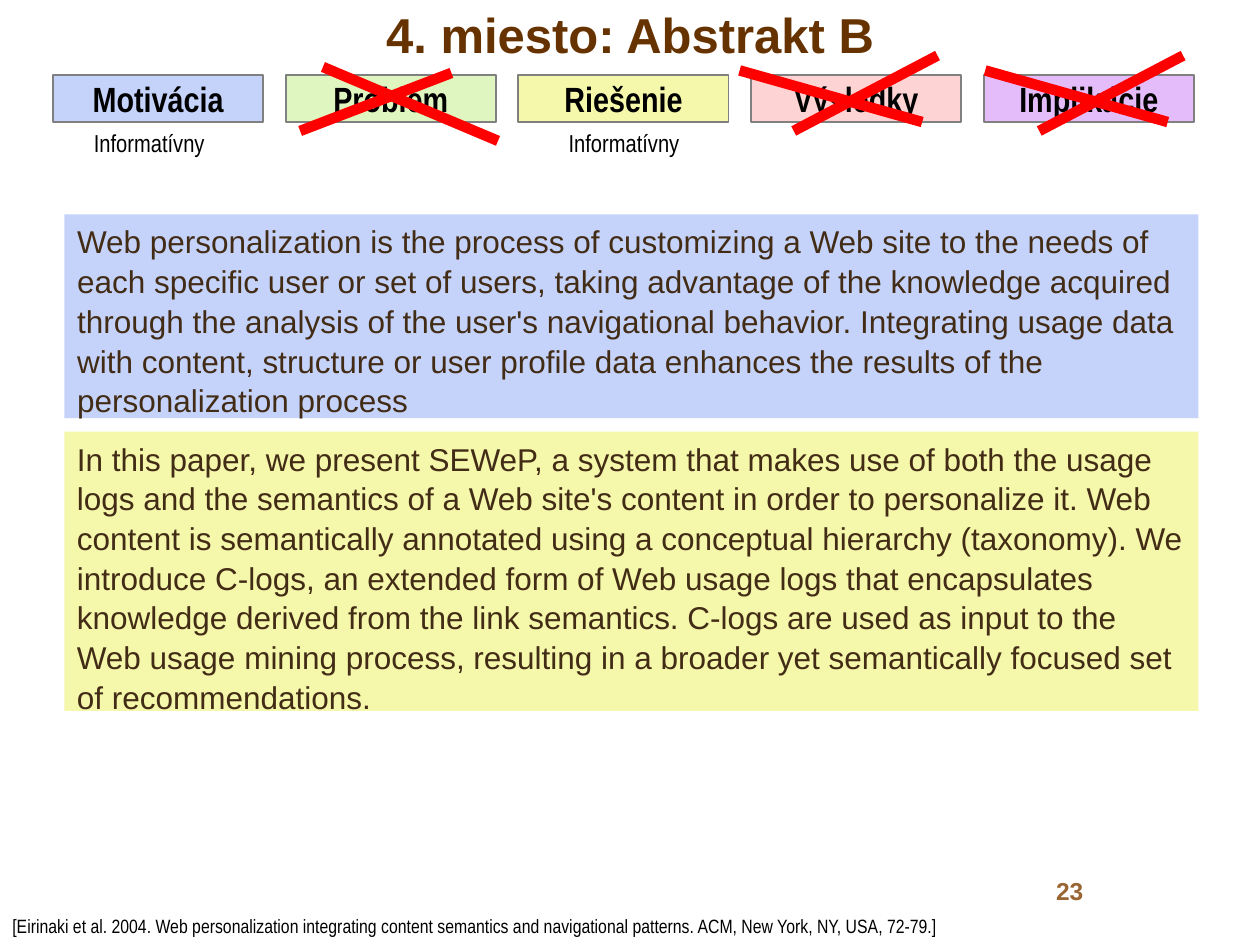
from lxml.etree import SubElement
from pptx import Presentation
from pptx.dml.color import RGBColor
from pptx.enum.shapes import MSO_CONNECTOR, MSO_SHAPE
from pptx.enum.text import MSO_ANCHOR, MSO_AUTO_SIZE, PP_ALIGN
from pptx.oxml.ns import qn
from pptx.util import Cm, Pt

# Colours
BLACK = RGBColor(0x00, 0x00, 0x00)
GREY = RGBColor(0x80, 0x80, 0x80)
RED = RGBColor(0xFF, 0x00, 0x00)
TITLE_BROWN = RGBColor(0x66, 0x33, 0x00)
NUMBER_BROWN = RGBColor(0x99, 0x66, 0x33)
BODY_BROWN = RGBColor(0x42, 0x2C, 0x16)
BLUE = RGBColor(0xC5, 0xD3, 0xFB)
GREEN = RGBColor(0xDF, 0xF6, 0xC0)
YELLOW = RGBColor(0xF5, 0xF7, 0xAB)
PINK = RGBColor(0xFD, 0xD3, 0xD4)
VIOLET = RGBColor(0xE4, 0xBC, 0xFA)

# Content
TITLE = "4. miesto: Abstrakt B"
SECTIONS = [("Motivácia", BLUE), ("Problém", GREEN), ("Riešenie", YELLOW),
            ("Výsledky", PINK), ("Implikácie", VIOLET)]
RATING = "Informatívny"
RATING_LEFTS = [0.89, 10.46]
MOTIVATION = (
    "Web personalization is the process of customizing a Web site to the needs of "
    "each specific user or set of users, taking advantage of the knowledge acquired "
    "through the analysis of the user's navigational behavior. Integrating usage data "
    "with content, structure or user profile data enhances the results of the "
    "personalization process")
SOLUTION = (
    "In this paper, we present SEWeP, a system that makes use of both the usage "
    "logs and the semantics of a Web site's content in order to personalize it. Web "
    "content is semantically annotated using a conceptual hierarchy (taxonomy). We "
    "introduce C-logs, an extended form of Web usage logs that encapsulates "
    "knowledge derived from the link semantics. C-logs are used as input to the "
    "Web usage mining process, resulting in a broader yet semantically focused set "
    "of recommendations.")
CITATION = ("[Eirinaki et al. 2004. Web personalization integrating content semantics "
            "and navigational patterns. ACM, New York, NY, USA, 72-79.]")
PAGE = "23"

# Cross strokes (x1, y1, x2, y2) in cm, x counted from the left of the cross
NARROW_CROSS = [(0, 2.64, 3.05, 1.47), (0.46, 1.35, 3.99, 2.84)]
WIDE_CROSS = [(3.99, 1.12, 1.09, 2.64), (3.68, 2.46, 0, 1.42)]
CROSSES = [(19.86, WIDE_CROSS), (6.05, NARROW_CROSS), (14.91, WIDE_CROSS)]

# Section row, in cm
ROW_LEFT, ROW_TOP, ROW_PITCH = 1.07, 1.52, 4.69
SECTION_WIDTH, SECTION_HEIGHT = 4.24, 0.94


def place(shape, left, top, width, height):
    shape.left, shape.top = Cm(left), Cm(top)
    shape.width, shape.height = Cm(width), Cm(height)


def write(shape, text, size, color, font="Arial", bold=False,
          align=PP_ALIGN.LEFT, anchor=MSO_ANCHOR.TOP, spacing=1.0):
    frame = shape.text_frame
    frame.word_wrap = True
    frame.auto_size = MSO_AUTO_SIZE.NONE
    frame.vertical_anchor = anchor
    paragraph = frame.paragraphs[0]
    paragraph.alignment = align
    paragraph.space_before = Pt(0)
    paragraph.line_spacing = spacing
    run = paragraph.add_run()
    run.text = text
    run.font.name, run.font.size, run.font.bold = font, Pt(size), bold
    run.font.color.rgb = color


def add_label(left, top, width, height, text, size, color, **style):
    label = slide.shapes.add_textbox(Cm(left), Cm(top), Cm(width), Cm(height))
    write(label, text, size, color, **style)


def add_box(left, top, width, height, fill):
    box = slide.shapes.add_shape(MSO_SHAPE.RECTANGLE, Cm(left), Cm(top),
                                 Cm(width), Cm(height))
    box.shadow.inherit = False
    box.fill.solid()
    box.fill.fore_color.rgb = fill
    box.line.fill.background()
    return box


deck = Presentation()
deck.slide_width, deck.slide_height = Cm(25.4), Cm(19.05)
slide = deck.slides.add_slide(deck.slide_layouts[1])

# Title
title = slide.shapes.title
place(title, 1.27, 0.13, 22.86, 1.12)
write(title, TITLE, 28, TITLE_BROWN, bold=True,
      align=PP_ALIGN.CENTER, anchor=MSO_ANCHOR.MIDDLE)

# Section row with ratings below
for index, (name, fill) in enumerate(SECTIONS):
    section = add_box(ROW_LEFT + index * ROW_PITCH, ROW_TOP,
                      SECTION_WIDTH, SECTION_HEIGHT, fill)
    section.line.color.rgb = GREY
    section.line.width = Pt(1)
    write(section, name, 20, BLACK, font="Arial Narrow", bold=True,
          align=PP_ALIGN.CENTER, anchor=MSO_ANCHOR.MIDDLE)
for left in RATING_LEFTS:
    add_label(left, ROW_TOP + SECTION_HEIGHT, SECTION_WIDTH, 0.86, RATING, 14, BLACK,
              font="Arial Narrow", align=PP_ALIGN.CENTER)

# Abstract: motivation in the body placeholder, solution below
motivation = slide.placeholders[1]
place(motivation, 1.3, 4.32, 22.86, 4.11)
motivation.fill.solid()
motivation.fill.fore_color.rgb = BLUE
properties = motivation.text_frame.paragraphs[0]._p.get_or_add_pPr()
properties.set("marL", "0")
properties.set("indent", "0")
SubElement(properties, qn("a:buNone"))
write(motivation, MOTIVATION, 18, BODY_BROWN, spacing=1.05)
solution = add_box(1.3, 8.7, 22.86, 5.63, YELLOW)
write(solution, SOLUTION, 18, BODY_BROWN, spacing=1.05)

# Crosses over the missing sections
for left, strokes in CROSSES:
    cross = slide.shapes.add_group_shape()
    for x1, y1, x2, y2 in strokes:
        stroke = cross.shapes.add_connector(MSO_CONNECTOR.STRAIGHT, Cm(left + x1), Cm(y1),
                                            Cm(left + x2), Cm(y2))
        stroke.line.color.rgb = RED
        stroke.line.width = Pt(6)
        SubElement(stroke._element.spPr, qn("a:effectLst"))

# Citation and page number
add_label(0, 18.31, 21.69, 0.74, CITATION, 11, BLACK, font="Arial Narrow")
add_label(20.57, 17.53, 1.52, 0.86, PAGE, 14, NUMBER_BROWN, bold=True,
          align=PP_ALIGN.RIGHT)

deck.save("out.pptx")
